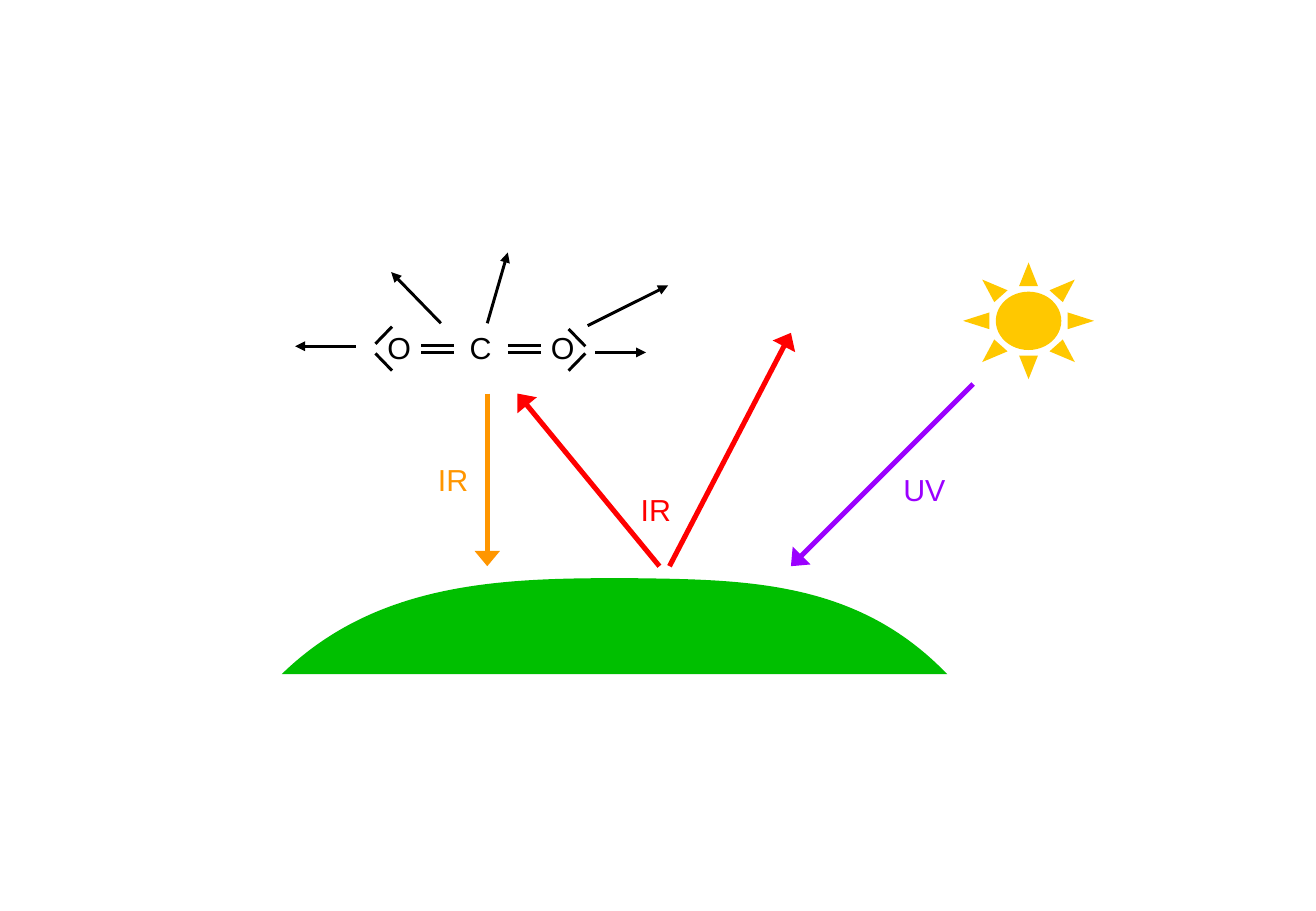
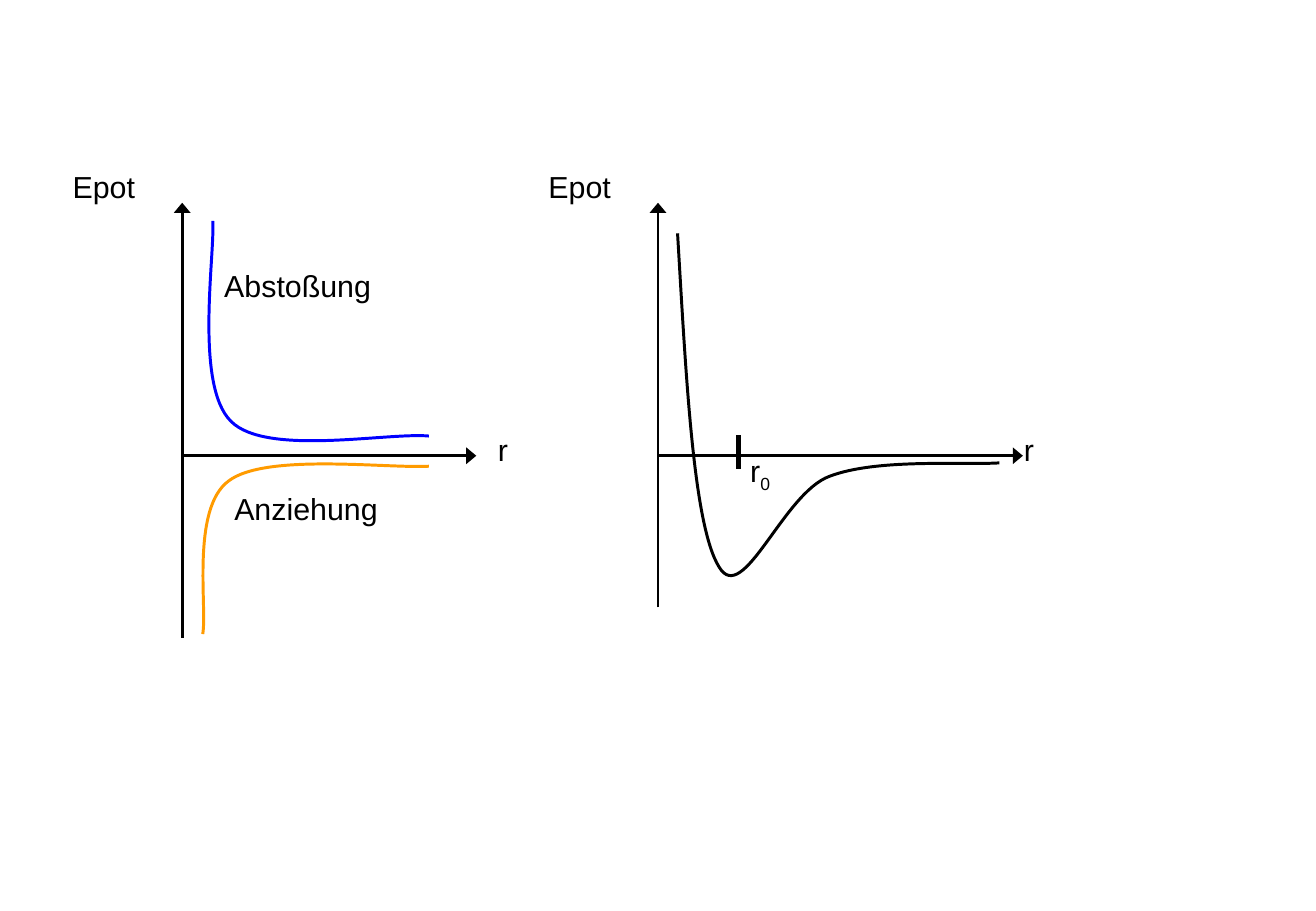
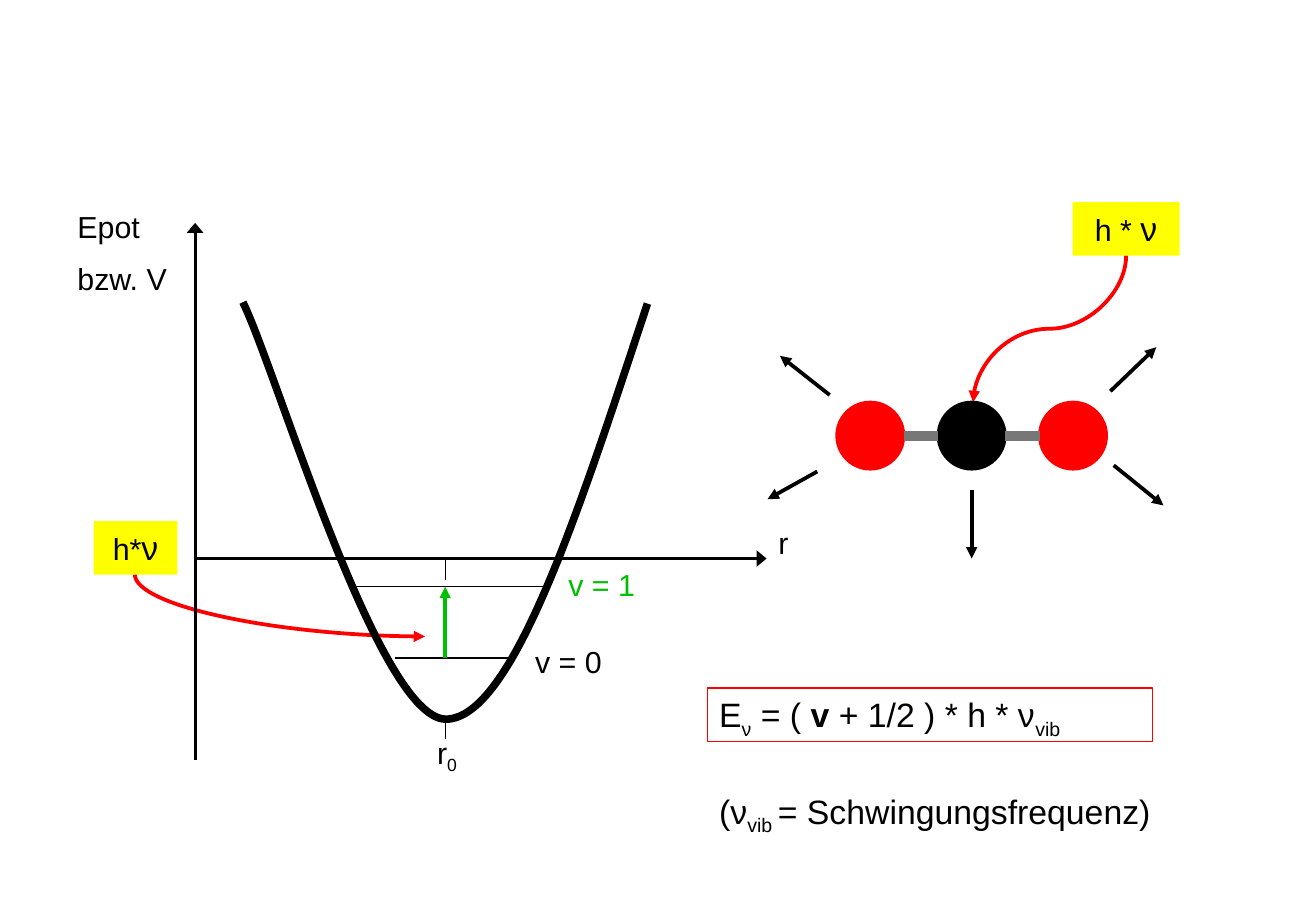
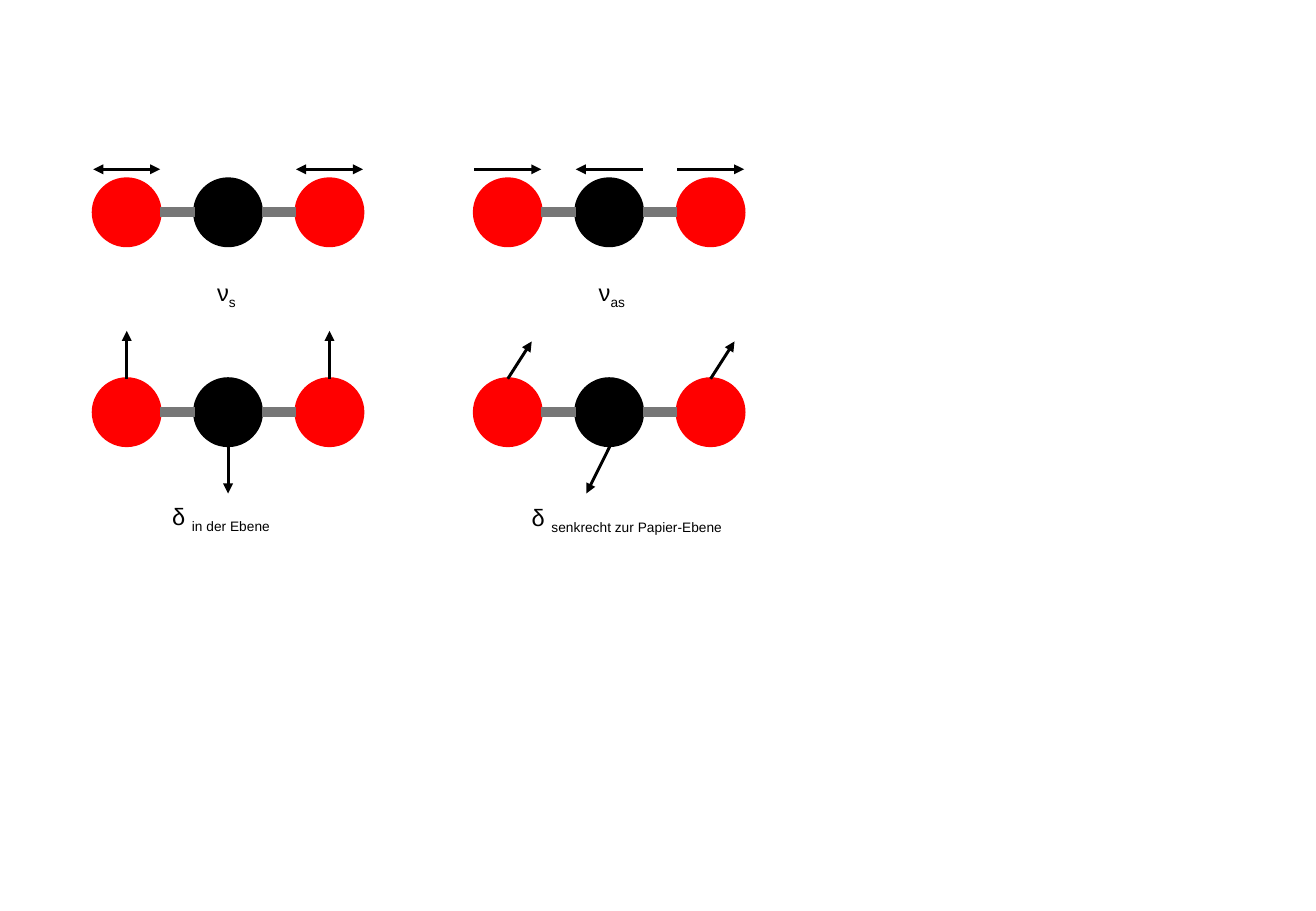
from lxml import etree
from pptx import Presentation
from pptx.dml.color import RGBColor
from pptx.enum import shapes, text
from pptx.oxml import ns
from pptx.util import Cm, Pt

# Shared style; all positions are in centimetres
FONT = "Arial"
BLACK = RGBColor(0x00, 0x00, 0x00)
RED = RGBColor(0xFF, 0x00, 0x00)
GREEN = RGBColor(0x00, 0xBF, 0x00)
BLUE = RGBColor(0x00, 0x00, 0xFF)
ORANGE = RGBColor(0xFF, 0x96, 0x00)
LIGHT_ORANGE = RGBColor(0xFF, 0x9B, 0x00)
VIOLET = RGBColor(0x9B, 0x00, 0xFF)
YELLOW = RGBColor(0xFF, 0xFF, 0x00)
SUN_YELLOW = RGBColor(0xFF, 0xC8, 0x00)
GREY = RGBColor(0x77, 0x77, 0x77)
HAIRLINE, THIN, MEDIUM, THICK, HEAVY, BOND = 0.75, 1.75, 2.25, 3, 4.5, 6
ATOM_SIZE, ATOM_PITCH = 1.4, 2.12

# Slide 1: greenhouse effect (start, end, colour)
SUN = (20.14, 5.49, 2.74, 2.44)
RADIATION = [
    ((13.79, 11.84), (10.82, 8.23), RED),
    ((14, 11.84), (16.54, 6.96), RED),
    ((20.35, 8.03), (16.54, 11.84), VIOLET),
    ((10.19, 8.23), (10.19, 11.84), ORANGE),
]
RADIATION_LABELS = [
    ("IR", (13.15, 10.15, 1.27, 1.02), RED),
    ("UV", (18.64, 9.73, 1.47, 1.02), VIOLET),
    ("IR", (8.91, 9.52, 1.27, 1.02), ORANGE),
]
MOTION = [
    ((10.19, 6.76), (10.62, 5.28)),
    ((9.22, 6.76), (8.18, 5.69)),
    ((12.29, 6.81), (13.97, 5.97)),
    ((7.44, 7.24), (6.17, 7.24)),
    ((12.45, 7.37), (13.51, 7.37)),
]
ATOM_LETTERS, ATOM_LETTERS_BOX, ATOM_TABS = "O\tC\tO", (7.85, 6.75, 5.92, 1.27), (1.95, 3.67)
DOUBLE_BOND_STARTS, DOUBLE_BOND_ROWS, DOUBLE_BOND_LENGTH = (8.81, 10.62), (7.22, 7.38), 0.69
LONE_PAIRS = [
    ((7.85, 7.39), (8.2, 7.75)),
    ((7.85, 7.19), (8.2, 6.83)),
    ((11.89, 7.75), (12.24, 7.39)),
    ((11.89, 6.88), (12.24, 7.24)),
]
HILL = [(5.89, 14.1), (7.92, 12.12), (10.62, 12.09), (13.11, 12.09),
        (15.57, 12.12), (17.91, 12.12), (19.81, 14.1)]

# Slide 2: potential energy (origin, top, bottom, right end of the axes)
ENERGY_AXES = [((3.81, 9.53), 4.24, 13.34, 9.96), ((13.76, 9.53), 4.24, 12.7, 21.39)]
ENERGY_CURVES = [
    (BLUE, [(4.45, 4.62), (4.5, 5.31), (4.06, 8.05), (4.83, 8.81),
            (5.56, 9.55), (8.1, 9.04), (8.97, 9.12)]),
    (LIGHT_ORANGE, [(4.24, 13.26), (4.34, 12.73), (3.99, 10.64), (4.78, 10.06),
                    (5.54, 9.47), (8.1, 9.8), (8.97, 9.75)]),
    (BLACK, [(14.17, 4.88), (14.35, 7.92), (14.5, 11), (15.04, 11.86),
             (15.54, 12.7), (16.38, 10.31), (17.35, 9.96),
             (18.34, 9.58), (20.17, 9.73), (20.9, 9.68)]),
]
R_ZERO = [("r", ""), ("0", "sub")]
ENERGY_LABELS = [
    ("Epot", (1.27, 3.39, 2.54, 1.27)),
    ("Epot", (11.22, 3.39, 2.54, 1.27)),
    ("r", (10.16, 8.89, 0.85, 1.27)),
    ("r", (21.16, 8.89, 0.85, 1.27)),
    ("Abstoßung", (4.44, 5.46, 4.5, 1.27)),
    ("Anziehung", (4.65, 10.13, 4.67, 1.27)),
    (R_ZERO, (15.44, 9.34, 1.27, 1.27)),
]
R_ZERO_TICK = ((15.45, 9.8), (15.45, 9.09))

# Slide 3: vibration levels
OSCILLATOR_AXES = ((4.08, 11.68), 4.66, 15.9, 16.03)
OSCILLATOR = [(5.08, 6.32), (5.79, 7.77), (7.9, 15.01), (9.32, 15.04),
              (10.72, 15.04), (12.12, 10.64), (13.54, 6.35)]
LEVEL_LINES = [
    ((9.32, 11.68), (9.32, 12.12)), ((9.32, 15.04), (9.32, 15.46)),
    ((7.42, 12.27), (11.43, 12.27)), ((8.26, 13.76), (10.8, 13.76)),
]
EXCITATION = ((9.31, 13.76), (9.31, 12.27))
OSCILLATOR_LABELS = [
    ("v = 1", (11.53, 11.71, 2.11, 1.02), GREEN),
    ("v = 0", (10.94, 13.33, 2.11, 1.02), BLACK),
    (["Epot", "bzw. V"], (1.37, 4.23, 2.72, 2.18), BLACK),
    ("r", (16.03, 10.84, 1.32, 1.02), BLACK),
    (R_ZERO, (8.89, 15.22, 1.98, 1.02), BLACK),
]
# Photon text, box, start and end of its curve, curve preset
PHOTONS = [
    ("h * ", (22.43, 4.23, 2.24, 1.12), (23.55, 5.34), (20.35, 8.41), "curvedConnector3"),
    ("h*", (1.96, 10.9, 1.75, 1.12), (2.82, 12.01), (8.89, 13.31), "curvedConnector2"),
]
SHAKING = [
    ((20.32, 10.24), (20.32, 11.68)),
    ((23.29, 9.73), (24.33, 10.57)),
    ((23.22, 8.18), (24.18, 7.26)),
    ((17.35, 8.26), (16.31, 7.44)),
    ((17.09, 9.86), (16.05, 10.44)),
]
SHAKEN_MOLECULE = (17.5, 8.41)
FORMULA_BOX = (14.79, 14.39, 9.32, 1.12)
FORMULA = [("E", ""), ("ν", "sub"), (" = (", ""), (" v", "bold"),
           (" + 1/2 ) * h * ν", ""), ("vib", "sub")]
FREQUENCY_BOX = (14.79, 16.41, 9.88, 1.12)
FREQUENCY = [("(ν", ""), ("vib ", "sub"), ("= Schwingungsfrequenz)", "")]

# Slide 4: modes (symbol, index, molecule corner, label box, arrows)
# Arrow: atom number, start and end from the atom's corner, both ends pointed
LEFT, RIGHT, UPPER, LOWER = 1.95, 9.92, 3.74, 7.92
OUTWARD, INWARD = ((0, -0.2), (1.4, -0.2)), ((1.4, -0.2), (0, -0.2))
UP, DOWN = ((0.7, 0), (0.7, -1)), ((0.7, 1.4), (0.7, 2.4))
BACK, FRONT = ((0.7, 0), (1.2, -0.78)), ((0.72, 1.4), (0.22, 2.4))
MODES = [
    ("ν", "s", (LEFT, UPPER), (4.29, 5.69, 0.91, 0.86),
     [(0, OUTWARD, True), (2, OUTWARD, True)]),
    ("ν", "as", (RIGHT, UPPER), (12.27, 5.69, 1.12, 0.86),
     [(0, OUTWARD, False), (1, INWARD, False), (2, OUTWARD, False)]),
    ("δ ", "in der Ebene", (LEFT, LOWER), (3.35, 10.38, 2.92, 0.86),
     [(0, UP, False), (1, DOWN, False), (2, UP, False)]),
    ("δ ", "senkrecht zur Papier-Ebene", (RIGHT, LOWER), (10.87, 10.39, 5.08, 0.86),
     [(0, BACK, False), (1, FRONT, False), (2, BACK, False)]),
]


def write(shape, content, size=18, color=BLACK, centred=False, wrap=True, tabs=()):
    """Content is a string, a list of strings (paragraphs) or a list of (text, style) runs."""
    frame = shape.text_frame
    frame.word_wrap = wrap
    frame.vertical_anchor = text.MSO_ANCHOR.TOP
    if not wrap:
        frame.auto_size = text.MSO_AUTO_SIZE.SHAPE_TO_FIT_TEXT
    if isinstance(content, str):
        content = [content]
    if isinstance(content[0], str):
        paragraphs = [[(line, "")] for line in content]
    else:
        paragraphs = [content]
    for number, runs in enumerate(paragraphs):
        paragraph = frame.add_paragraph() if number else frame.paragraphs[0]
        paragraph.alignment = text.PP_ALIGN.CENTER if centred else text.PP_ALIGN.LEFT
        if number:
            paragraph.space_before = Pt(size / 2)
        if tabs:
            stops = etree.SubElement(paragraph._p.get_or_add_pPr(), ns.qn("a:tabLst"))
            for position in tabs:
                etree.SubElement(stops, ns.qn("a:tab"), pos=str(int(Cm(position))), algn="ctr")
        for words, style in runs:
            run = paragraph.add_run()
            run.text = words
            font = run.font
            font.name, font.size, font.color.rgb = FONT, Pt(size), color
            if style == "bold":
                font.bold = True
            elif style == "large":
                font.size = Pt(20)
            elif style == "sub":
                run._r.get_or_add_rPr().set("baseline", "-25000")


def label(slide, content, box, **style):
    write(slide.shapes.add_textbox(*map(Cm, box)), content, **style)


def paint(shape, fill=None, line=None, width=THIN):
    shape.shadow.inherit = False
    if fill is None:
        shape.fill.background()
    else:
        shape.fill.solid()
        shape.fill.fore_color.rgb = fill
    if line is None:
        shape.line.fill.background()
    else:
        shape.line.color.rgb = line
        shape.line.width = Pt(width)


def preset(slide, kind, box, **style):
    shape = slide.shapes.add_shape(kind, *map(Cm, box))
    paint(shape, **style)
    return shape


def connect(slide, start, end, color=BLACK, width=THIN, heads=(), head_width="med",
            kind=shapes.MSO_CONNECTOR.STRAIGHT):
    connector = slide.shapes.add_connector(kind, *map(Cm, (*start, *end)))
    connector.line.color.rgb = color
    connector.line.width = Pt(width)
    properties = connector.element.spPr
    line = properties.find(ns.qn("a:ln"))
    for head in heads:
        etree.SubElement(line, ns.qn("a:" + head), type="triangle", w=head_width)
    etree.SubElement(properties, ns.qn("a:effectLst"))
    return connector


def arrow(slide, start, end, both=False, **style):
    heads = ("headEnd", "tailEnd") if both else ("tailEnd",)
    return connect(slide, start, end, heads=heads, **style)


def falling_curve(slide, start, end, geometry, **style):
    """Curved arrow that leaves its start downwards: a connector turned a quarter."""
    across, down = abs(end[0] - start[0]), end[1] - start[1]
    left = (start[0] + end[0] - down) / 2
    top = (start[1] + end[1] - across) / 2
    connector = arrow(slide, (left, top), (left + down, top + across),
                      kind=shapes.MSO_CONNECTOR.CURVE, **style)
    properties = connector.element.spPr
    properties.find(ns.qn("a:prstGeom")).set("prst", geometry)
    frame = properties.find(ns.qn("a:xfrm"))
    if end[0] < start[0]:
        frame.set("rot", str(90 * 60000))
    else:
        frame.set("rot", str(270 * 60000))
        frame.set("flipH", "1")


def bezier(slide, points, closed=False, **style):
    """Outline through cubic segments: a start, then three points for each segment."""
    builder = slide.shapes.build_freeform(*map(Cm, points[0]))
    builder.add_line_segments([tuple(map(Cm, point)) for point in points[1:]], close=closed)
    shape = builder.convert_to_shape()
    # Join every three straight steps into one cubic segment
    steps = list(shape.element.spPr.iter(ns.qn("a:lnTo")))
    for first in range(0, len(points) - 1, 3):
        group = steps[first:first + 3]
        cubic = etree.Element(ns.qn("a:cubicBezTo"))
        group[0].addprevious(cubic)
        for step in group:
            cubic.append(step[0])
            step.getparent().remove(step)
    paint(shape, **style)


def axes(slide, origin, top, bottom, right):
    arrow(slide, (origin[0], bottom), (origin[0], top), head_width="lg")
    arrow(slide, origin, (right, origin[1]), head_width="lg")


def molecule(slide, left, top):
    for number, color in ((0, RED), (2, RED), (1, BLACK)):
        preset(slide, shapes.MSO_SHAPE.OVAL,
               (left + number * ATOM_PITCH, top, ATOM_SIZE, ATOM_SIZE), fill=color, line=color)
    middle = top + ATOM_SIZE / 2
    for number in (0, 1):
        atom = left + number * ATOM_PITCH
        connect(slide, (atom + ATOM_SIZE, middle), (atom + ATOM_PITCH, middle),
                color=GREY, width=BOND)


def greenhouse(slide):
    preset(slide, shapes.MSO_SHAPE.SUN, SUN, fill=SUN_YELLOW)
    for start, end, color in RADIATION:
        arrow(slide, start, end, color=color, width=THICK, head_width="lg")
    for words, box, color in RADIATION_LABELS:
        label(slide, words, box, color=color)
    for start, end in MOTION:
        arrow(slide, start, end)
    # Structural formula
    label(slide, ATOM_LETTERS, ATOM_LETTERS_BOX, tabs=ATOM_TABS)
    bezier(slide, HILL, closed=True, fill=GREEN)
    for left in DOUBLE_BOND_STARTS:
        for row in DOUBLE_BOND_ROWS:
            connect(slide, (left, row), (left + DOUBLE_BOND_LENGTH, row))
    for start, end in LONE_PAIRS:
        connect(slide, start, end)


def potential_energy(slide):
    for axis_pair in ENERGY_AXES:
        axes(slide, *axis_pair)
    for color, points in ENERGY_CURVES:
        bezier(slide, points, line=color)
    connect(slide, *R_ZERO_TICK, width=THICK)
    for content, box in ENERGY_LABELS:
        label(slide, content, box)


def vibration_levels(slide):
    for words, box, start, end, geometry in PHOTONS:
        falling_curve(slide, start, end, geometry, color=RED, width=MEDIUM)
        photon = preset(slide, shapes.MSO_SHAPE.RECTANGLE, box, fill=YELLOW)
        write(photon, [(words, ""), ("ν", "large")], centred=True)
    # Oscillator
    axes(slide, *OSCILLATOR_AXES)
    for start, end in LEVEL_LINES:
        connect(slide, start, end, width=HAIRLINE)
    arrow(slide, *EXCITATION, color=GREEN, width=MEDIUM)
    bezier(slide, OSCILLATOR, line=BLACK, width=HEAVY)
    for content, box, color in OSCILLATOR_LABELS:
        label(slide, content, box, color=color, centred=color == GREEN)
    # Vibrating molecule
    molecule(slide, *SHAKEN_MOLECULE)
    for start, end in SHAKING:
        arrow(slide, start, end, width=MEDIUM)
    # Energy formula
    formula = preset(slide, shapes.MSO_SHAPE.RECTANGLE, FORMULA_BOX, line=RED, width=HAIRLINE)
    write(formula, FORMULA, size=20)
    label(slide, FREQUENCY, FREQUENCY_BOX, size=20)


def vibration_modes(slide):
    for symbol, index, (left, top), box, moves in MODES:
        molecule(slide, left, top)
        for atom, ends, both in moves:
            start, end = [(left + atom * ATOM_PITCH + x, top + y) for x, y in ends]
            arrow(slide, start, end, both=both)
        label(slide, [(symbol, ""), (index, "sub")], box, size=14, wrap=False)


def main():
    presentation = Presentation()
    presentation.slide_width, presentation.slide_height = Cm(27.52), Cm(19.05)
    blank = presentation.slide_layouts[6]
    for draw in (greenhouse, potential_energy, vibration_levels, vibration_modes):
        draw(presentation.slides.add_slide(blank))
    presentation.save("out.pptx")


if __name__ == "__main__":
    main()
